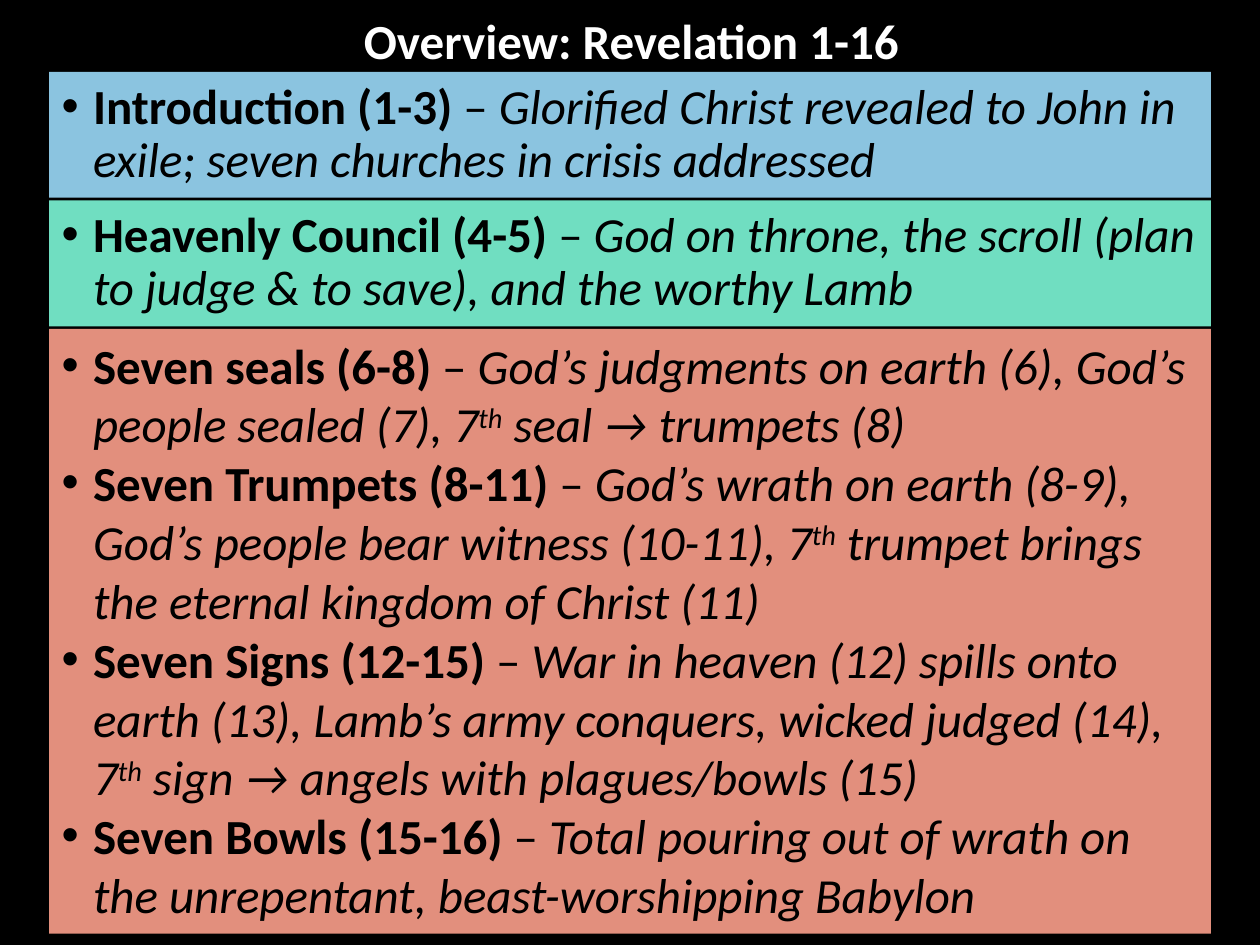
from lxml import etree
from pptx import Presentation
from pptx.dml.color import RGBColor
from pptx.enum.shapes import MSO_SHAPE
from pptx.enum.text import MSO_ANCHOR, PP_ALIGN
from pptx.oxml.ns import qn
from pptx.util import Inches, Pt

RECTANGLE = MSO_SHAPE.RECTANGLE
TOP, MIDDLE = MSO_ANCHOR.TOP, MSO_ANCHOR.MIDDLE
LEFT, CENTER = PP_ALIGN.LEFT, PP_ALIGN.CENTER

COLORS = {
    "background": "000000",
    "title": "FFFFFF",
    "text": "000000",
    "introduction": "8BC4E0",
    "council": "70DEC1",
    "sevens": "E28F7D",
}
BAND_LEFT, BAND_WIDTH = 0.39, 9.22
ORDINAL = "th"

INTRODUCTION = [
    ("Introduction (1-3) ",
     ["Glorified Christ revealed to John in exile; seven churches in crisis addressed"]),
]
COUNCIL = [
    ("Heavenly Council (4-5) ",
     ["God on throne, the scroll (plan to judge & to save), and the worthy Lamb"]),
]
SEVENS = [
    ("Seven seals (6-8) ",
     ["God’s judgments on earth (6), God’s people sealed (7), 7", ORDINAL,
      " seal → trumpets (8)"]),
    ("Seven Trumpets (8-11) ",
     ["God’s wrath on earth (8-9), God’s people bear witness (10-11), 7", ORDINAL,
      " trumpet brings the eternal kingdom of Christ (11)"]),
    ("Seven Signs (12-15) ",
     ["War in heaven (12) spills onto earth (13), Lamb’s army conquers, "
      "wicked judged (14), 7", ORDINAL, " sign → angels with plagues/bowls (15)"]),
    ("Seven Bowls (15-16) ",
     ["Total pouring out of wrath on the unrepentant, beast-worshipping Babylon"]),
]
BANDS = [
    ("introduction", 0.57, 1, MIDDLE, 0.9, INTRODUCTION),
    ("council", 1.59, 1, MIDDLE, 0.9, COUNCIL),
    ("sevens", 2.61, 4.8, TOP, 1.0, SEVENS),
]


class OverviewSlide:
    """Holds the text style and the slide, and adds its title and bands."""

    style = {"name": "Calibri", "size": Pt(28)}

    def __init__(self, slide):
        self.slide = slide
        background = slide.background.fill
        background.solid()
        background.fore_color.rgb = RGBColor.from_string(COLORS["background"])

    def run(self, paragraph, text, color="text", **emphasis):
        run = paragraph.add_run()
        run.text = text
        for attribute, value in {**self.style, **emphasis}.items():
            setattr(run.font, attribute, value)
        run.font.color.rgb = RGBColor.from_string(COLORS[color])
        return run

    def title(self, text, left, top, width, height):
        box = self.slide.shapes.add_textbox(
            Inches(left), Inches(top), Inches(width), Inches(height))
        frame = box.text_frame
        frame.word_wrap = True
        frame.vertical_anchor = MIDDLE
        paragraph = frame.paragraphs[0]
        paragraph.alignment = CENTER
        paragraph.line_spacing = 0.9
        self.run(paragraph, text, "title", bold=True)

    def bullet(self, paragraph, heading, summary, spacing):
        properties = paragraph._p.get_or_add_pPr()
        indent = Inches(0.25)
        properties.set("marL", str(indent))
        properties.set("indent", str(-indent))
        etree.SubElement(properties, qn("a:buFont"), typeface="Arial")
        etree.SubElement(properties, qn("a:buChar"), char="•")
        paragraph.alignment = LEFT
        paragraph.line_spacing = spacing
        self.run(paragraph, heading, bold=True)
        self.run(paragraph, "– ")
        for part in summary:
            run = self.run(paragraph, part, italic=True)
            if part == ORDINAL:
                run.font._element.set("baseline", "30000")

    def band(self, color, top, height, anchor, spacing, entries):
        band = self.slide.shapes.add_shape(
            RECTANGLE, Inches(BAND_LEFT), Inches(top), Inches(BAND_WIDTH), Inches(height))
        band.shadow.inherit = False
        band.fill.solid()
        band.fill.fore_color.rgb = RGBColor.from_string(COLORS[color])
        band.line.fill.background()
        frame = band.text_frame
        frame.word_wrap = True
        frame.vertical_anchor = anchor
        for index, (heading, summary) in enumerate(entries):
            paragraph = frame.add_paragraph() if index else frame.paragraphs[0]
            self.bullet(paragraph, heading, summary, spacing)


def main():
    presentation = Presentation()
    presentation.slide_width = Inches(10)
    presentation.slide_height = Inches(7.5)
    blank = presentation.slide_layouts[6]
    overview = OverviewSlide(presentation.slides.add_slide(blank))
    overview.title("Overview: Revelation 1-16", 0.7, 0.05, 8.62, 0.6)
    for band in BANDS:
        overview.band(*band)
    presentation.save("out.pptx")


if __name__ == "__main__":
    main()
